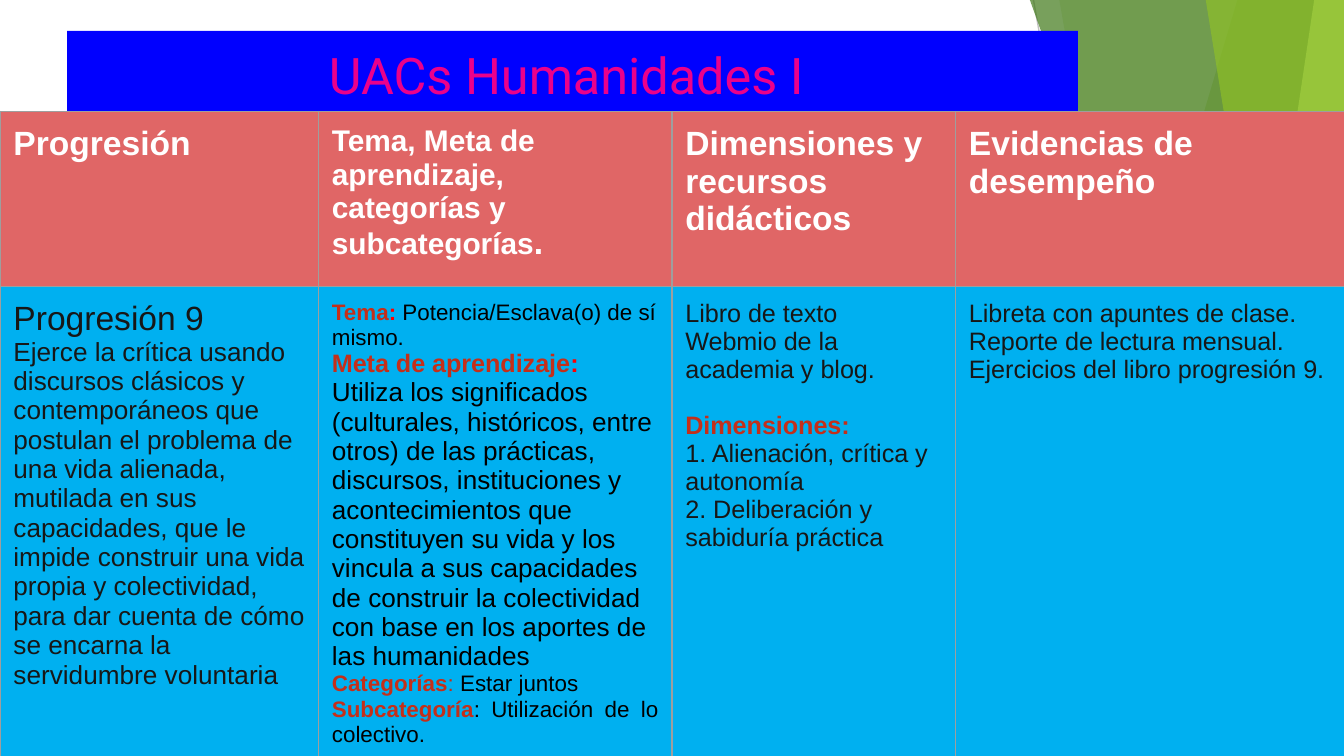
from lxml import etree
from pptx import Presentation
from pptx.dml.color import RGBColor
from pptx.enum.shapes import MSO_CONNECTOR, MSO_SHAPE
from pptx.enum.text import MSO_ANCHOR, PP_ALIGN
from pptx.oxml.ns import qn
from pptx.util import Inches, Pt

WHITE = RGBColor(0xFF, 0xFF, 0xFF)
BLACK = RGBColor(0x00, 0x00, 0x00)
INK = RGBColor(0x17, 0x17, 0x17)
RED = RGBColor(0xFF, 0x00, 0x00)
BRICK = RGBColor(0xC4, 0x2F, 0x1A)
BLUE = RGBColor(0x00, 0x00, 0xFF)
PINK = RGBColor(0xEB, 0x00, 0x8B)
CORAL = RGBColor(0xE0, 0x66, 0x66)
SKY = RGBColor(0x00, 0xB0, 0xF0)
BORDER = RGBColor(0x9E, 0x9E, 0x9E)
GRAY = RGBColor(0xBF, 0xBF, 0xBF)
LIGHT_GRAY = RGBColor(0xD8, 0xD8, 0xD8)
LIME = RGBColor(0x90, 0xC2, 0x26)
PALE_LIME = RGBColor(0xBF, 0xE4, 0x71)
GREEN = RGBColor(0x54, 0xA0, 0x21)
DARK_GREEN = RGBColor(0x3F, 0x78, 0x18)

WIDTH = 10
HEIGHT = WIDTH * 9 / 16
PANEL_TOP = -0.01
COLUMN_WIDTHS = [2.37, 2.63, 2.11, 2.94]
ROW_HEIGHTS = [0.83, 1.55]  # minimums: the rows grow with their text
TABLE_HEIGHT = 5.06
BLANK_LINE = 15

# A paragraph is a list of runs: (text, size, colour, bold).
HEADERS = [
    [("Progresión", 18, WHITE, True)],
    [("Tema, Meta de aprendizaje, categorías y subcategorías", 16, WHITE, True),
     (".", 18, WHITE, True)],
    [("Dimensiones y recursos didácticos", 18, WHITE, True)],
    [("Evidencias de desempeño", 18, WHITE, True)],
]
PROGRESSION = [
    [("Progresión 9", 18, INK, False)],
    [("Ejerce la crítica usando discursos clásicos y contemporáneos que postulan "
      "el problema de una vida alienada, mutilada en sus capacidades, que le impide "
      "construir una vida propia y colectividad, para dar cuenta de cómo se encarna "
      "la servidumbre voluntaria", 14, INK, False)],
]
TOPIC = [
    [("Tema", 12, BRICK, True), (": ", 12, RED, True),
     ("Potencia/Esclava(o) de sí mismo.", 12, BLACK, False)],
    [("Meta de aprendizaje", 13.5, BRICK, True), (":", 13.5, RED, True)],
    [("Utiliza los significados (culturales, históricos, entre otros) de las "
      "prácticas, discursos, instituciones y acontecimientos que constituyen su vida "
      "y los vincula a sus capacidades de construir la colectividad con base en los "
      "aportes de las humanidades", 14, BLACK, False)],
    [("Categorías", 12, BRICK, True), (":", 12, BRICK, False),
     (" Estar juntos", 12, BLACK, False)],
    [("Subcategoría", 12, BRICK, True),
     (": Utilización de lo colectivo.", 12, BLACK, False)],
]
RESOURCES = [
    [("Libro de texto", 13.5, INK, False)],
    [("Webmio de la academia y blog.", 13.5, INK, False)],
    [("Dimensiones:", 13.5, BRICK, True)],
    [("1. Alienación, crítica y autonomía", 13.5, INK, False)],
    [("2. Deliberación y sabiduría práctica", 13.5, INK, False)],
]
EVIDENCE = [
    [("Libreta con apuntes de clase.", 13.5, INK, False)],
    [("Reporte de lectura mensual.", 13.5, INK, False)],
    [("Ejercicios del libro progresión 9.", 13.5, INK, False)],
]


def paint(shape, color, opacity=100):
    """Give a shape a borderless, shadowless fill; opacity is in percent."""
    shape.shadow.inherit = False
    shape.line.fill.background()
    shape.fill.solid()
    shape.fill.fore_color.rgb = color
    if opacity < 100:
        color_element = shape._element.spPr.find(qn("a:solidFill"))[0]
        etree.SubElement(color_element, qn("a:alpha"), val=str(opacity * 1000))


def add_line(slide, start, end, color):
    line = slide.shapes.add_connector(
        MSO_CONNECTOR.STRAIGHT, *[Inches(value) for value in start + end])
    line.line.color.rgb = color
    line.line.width = Pt(0.75)
    etree.SubElement(line._element.spPr, qn("a:effectLst"))


def add_panel(slide, top_left, bottom_left, color, opacity):
    """Draw a full-height panel with a slanted left side, flush with the right edge."""
    builder = slide.shapes.build_freeform(Inches(top_left), Inches(PANEL_TOP))
    corners = [(WIDTH, PANEL_TOP), (WIDTH, HEIGHT), (bottom_left, HEIGHT)]
    builder.add_line_segments([(Inches(x), Inches(y)) for x, y in corners], close=True)
    paint(builder.convert_to_shape(), color, opacity)


def add_triangle(slide, left, top, width, apex, color, opacity):
    """Draw a triangle standing on the bottom edge; apex runs from 0 to 1."""
    triangle = slide.shapes.add_shape(
        MSO_SHAPE.ISOSCELES_TRIANGLE, Inches(left), Inches(top),
        Inches(width), Inches(HEIGHT - top))
    triangle.adjustments[0] = apex
    paint(triangle, color, opacity)


def add_background(slide):
    add_line(slide, (7.69, 0), (8.69, HEIGHT), GRAY)
    add_line(slide, (WIDTH, 3.02), (6.09, HEIGHT), LIGHT_GRAY)
    add_panel(slide, 9.21, 7.53, LIME, 30)
    add_panel(slide, 7.88, 8.87, LIME, 20)
    add_triangle(slide, 7.33, 2.5, 2.67, 1, GREEN, 72)
    add_panel(slide, 7.66, 9.68, DARK_GREEN, 70)
    add_panel(slide, 9.78, 8.94, PALE_LIME, 70)
    add_panel(slide, 8.97, 9.88, LIME, 65)
    add_triangle(slide, 8.51, 2.94, 1.49, 1, LIME, 80)
    add_triangle(slide, 0, 3.29, 0.37, 0, LIME, 85)


def set_margins(target):
    target.margin_left = target.margin_right = Inches(0.1)
    target.margin_top = target.margin_bottom = Inches(0.1)


def format_run(run, size, color, bold=False, font="Arial"):
    run.font.name = font
    run.font.size = Pt(size)
    run.font.color.rgb = color
    run.font.bold = bold


def add_title(slide):
    title = slide.shapes.add_textbox(Inches(0.5), Inches(0.23), Inches(7.52), Inches(0.74))
    paint(title, BLUE)
    frame = title.text_frame
    frame.word_wrap = True
    frame.vertical_anchor = MSO_ANCHOR.TOP
    set_margins(frame)
    frame.text = "UACs Humanidades I "
    paragraph = frame.paragraphs[0]
    paragraph.alignment = PP_ALIGN.CENTER
    format_run(paragraph.runs[0], 27, PINK, font="Roboto")


def add_borders(cell):
    properties = cell._tc.get_or_add_tcPr()
    for side in ("a:lnL", "a:lnR", "a:lnT", "a:lnB"):
        border = etree.SubElement(properties, qn(side), w=str(Pt(0.75)))
        fill = etree.SubElement(border, qn("a:solidFill"))
        etree.SubElement(fill, qn("a:srgbClr"), val=str(BORDER))


def fill_cell(cell, paragraphs, color):
    set_margins(cell)
    add_borders(cell)
    cell.fill.solid()
    cell.fill.fore_color.rgb = color
    frame = cell.text_frame
    for index, runs in enumerate(paragraphs):
        paragraph = frame.add_paragraph() if index else frame.paragraphs[0]
        for text, size, font_color, bold in runs:
            run = paragraph.add_run()
            run.text = text
            format_run(run, size, font_color, bold)


def add_progression_table(slide):
    table_frame = slide.shapes.add_table(
        len(ROW_HEIGHTS), len(COLUMN_WIDTHS), Inches(0), Inches(0.83),
        Inches(sum(COLUMN_WIDTHS)), Inches(TABLE_HEIGHT))
    table = table_frame.table
    for column, width in zip(table.columns, COLUMN_WIDTHS):
        column.width = Inches(width)
    for row, height in zip(table.rows, ROW_HEIGHTS):
        row.height = Inches(height)
    table_frame.height = Inches(TABLE_HEIGHT)
    bodies = [PROGRESSION, TOPIC, RESOURCES, EVIDENCE]
    for index, (header, body) in enumerate(zip(HEADERS, bodies)):
        fill_cell(table.cell(0, index), [header], CORAL)
        fill_cell(table.cell(1, index), body, SKY)
    for paragraph in table.cell(1, 1).text_frame.paragraphs[-2:]:
        paragraph.alignment = PP_ALIGN.JUSTIFY
    table.cell(1, 2).text_frame.paragraphs[2].space_before = Pt(BLANK_LINE)


def main():
    presentation = Presentation()
    presentation.slide_width = Inches(WIDTH)
    presentation.slide_height = Inches(HEIGHT)
    slide = presentation.slides.add_slide(presentation.slide_layouts[6])
    add_background(slide)
    add_title(slide)
    add_progression_table(slide)
    presentation.save("out.pptx")


if __name__ == "__main__":
    main()
